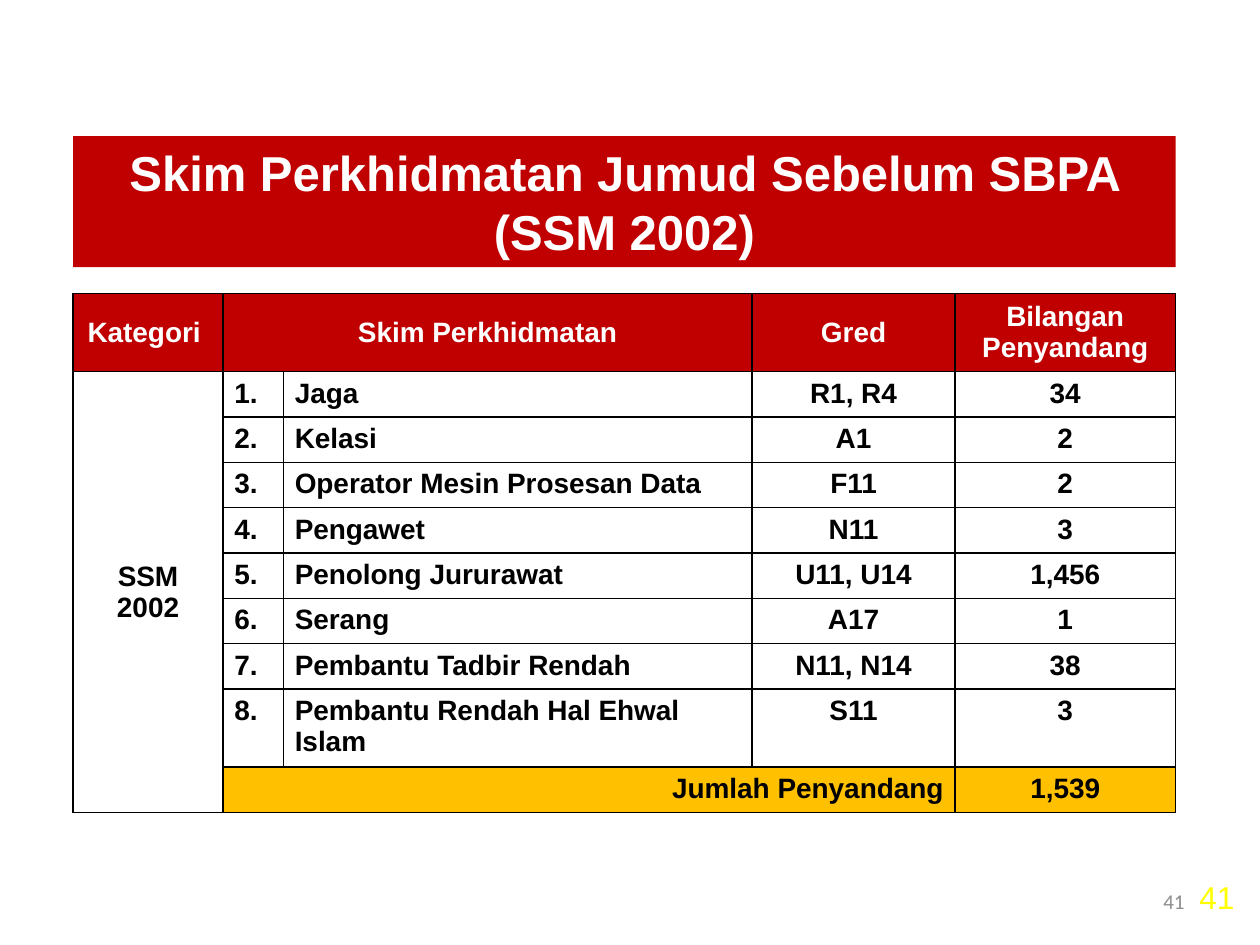
"""Build the slide on frozen service schemes before SBPA."""
from lxml import etree
from pptx import Presentation
from pptx.dml.color import RGBColor
from pptx.enum.text import MSO_ANCHOR, MSO_AUTO_SIZE, PP_ALIGN
from pptx.oxml.ns import qn
from pptx.util import Inches, Pt

LEFT, CENTER, RIGHT, JUSTIFY = PP_ALIGN.LEFT, PP_ALIGN.CENTER, PP_ALIGN.RIGHT, PP_ALIGN.JUSTIFY
TOP, MIDDLE = MSO_ANCHOR.TOP, MSO_ANCHOR.MIDDLE
NO_AUTOSIZE = MSO_AUTO_SIZE.NONE
COLORS = {"red": "C00000", "gold": "FFC000", "white": "FFFFFF",
          "black": "000000", "yellow": "FFFF00", "grey": "8C8C8C"}
COLUMN_WIDTHS = [1.19, 0.48, 3.72, 1.61, 1.75]
ROW_HEIGHTS = [0.62] + [0.36] * 7 + [0.62, 0.36]
SCHEMES = [
    ("Jaga", "R1, R4", "34"),
    ("Kelasi", "A1", "2"),
    ("Operator Mesin Prosesan Data", "F11", "2"),
    ("Pengawet", "N11", "3"),
    ("Penolong Jururawat", "U11, U14", "1,456"),
    ("Serang", "A17", "1"),
    ("Pembantu Tadbir Rendah", "N11, N14", "38"),
    ("Pembantu Rendah Hal Ehwal Islam", "S11", "3"),
]


class SlideBuilder:
    def __init__(self, slide, font="Arial"):
        self.slide = slide
        self.font = font

    def add_text(self, frame, text, size, color, align, bold=False, font=None):
        paragraph = frame.paragraphs[0]
        paragraph.alignment = align
        run = paragraph.add_run()
        run.text = text
        run.font.name = font or self.font
        run.font.size = Pt(size)
        run.font.bold = bold
        run.font.color.rgb = RGBColor.from_string(COLORS[color])

    def paint(self, fill, color):
        fill.solid()
        fill.fore_color.rgb = RGBColor.from_string(COLORS[color])

    def title(self, text, left, top, width, height):
        banner = self.slide.shapes.title
        banner.left, banner.top = Inches(left), Inches(top)
        banner.width, banner.height = Inches(width), Inches(height)
        self.paint(banner.fill, "red")
        frame = banner.text_frame
        frame.word_wrap = True
        frame.auto_size = NO_AUTOSIZE
        frame.vertical_anchor = MIDDLE
        self.add_text(frame, text, 28, "white", CENTER, bold=True)

    def label(self, text, left, top, width, height, size, color, align, anchor=TOP, font=None):
        box = self.slide.shapes.add_textbox(Inches(left), Inches(top), Inches(width), Inches(height))
        frame = box.text_frame
        frame.word_wrap = True
        frame.vertical_anchor = anchor
        self.add_text(frame, text, size, color, align, font=font)

    def table(self, left, top, widths, heights):
        table = self.slide.shapes.add_table(
            len(heights), len(widths), Inches(left), Inches(top),
            Inches(sum(widths)), Inches(sum(heights))).table
        table.first_row = table.horz_banding = False
        for column, width in zip(table.columns, widths):
            column.width = Inches(width)
        for row, height in zip(table.rows, heights):
            row.height = Inches(height)
        for cell in table.iter_cells():
            self.border(cell)
            cell.fill.background()
        return table

    def border(self, cell):
        properties = cell._tc.get_or_add_tcPr()
        for side in ("lnL", "lnR", "lnT", "lnB"):
            line = etree.SubElement(properties, qn(f"a:{side}"), w=str(Pt(1)))
            fill = etree.SubElement(line, qn("a:solidFill"))
            etree.SubElement(fill, qn("a:srgbClr"), val=COLORS["black"])

    def cell(self, cell, text, align=CENTER, anchor=TOP, color="black", fill=None):
        cell.vertical_anchor = anchor
        cell.margin_left = cell.margin_right = Inches(0.09)
        cell.margin_top = cell.margin_bottom = Inches(0.05)
        if fill:
            self.paint(cell.fill, fill)
        self.add_text(cell.text_frame, text, 16, color, align, bold=True)


def main():
    presentation = Presentation()
    presentation.slide_width, presentation.slide_height = Inches(10), Inches(7.5)
    builder = SlideBuilder(presentation.slides.add_slide(presentation.slide_layouts[5]))

    builder.title("Skim Perkhidmatan Jumud Sebelum SBPA (SSM 2002)", 0.58, 1.08, 8.75, 1.04)

    schemes = builder.table(0.58, 2.33, COLUMN_WIDTHS, ROW_HEIGHTS)
    total_row = len(ROW_HEIGHTS) - 1
    schemes.cell(0, 1).merge(schemes.cell(0, 2))
    schemes.cell(1, 0).merge(schemes.cell(total_row, 0))
    schemes.cell(total_row, 1).merge(schemes.cell(total_row, 3))

    headings = {0: "Kategori ", 1: "Skim Perkhidmatan", 3: "Gred", 4: "Bilangan Penyandang"}
    for column, heading in headings.items():
        builder.cell(schemes.cell(0, column), heading, anchor=MIDDLE, color="white", fill="red")

    builder.cell(schemes.cell(1, 0), "SSM 2002", anchor=MIDDLE)
    for number, (scheme, grade, holders) in enumerate(SCHEMES, 1):
        name_align = JUSTIFY if number < 7 else LEFT
        builder.cell(schemes.cell(number, 1), f"{number}.", name_align)
        builder.cell(schemes.cell(number, 2), scheme, name_align)
        builder.cell(schemes.cell(number, 3), grade)
        builder.cell(schemes.cell(number, 4), holders)

    builder.cell(schemes.cell(total_row, 1), "Jumlah Penyandang", RIGHT, fill="gold")
    builder.cell(schemes.cell(total_row, 4), "1,539", fill="gold")

    builder.label("41", 9.42, 6.92, 0.58, 0.4, 18, "yellow", LEFT)
    builder.label("41", 7.17, 6.95, 2.33, 0.4, 12, "grey", RIGHT, MIDDLE, "Calibri")

    presentation.save("out.pptx")


if __name__ == "__main__":
    main()
